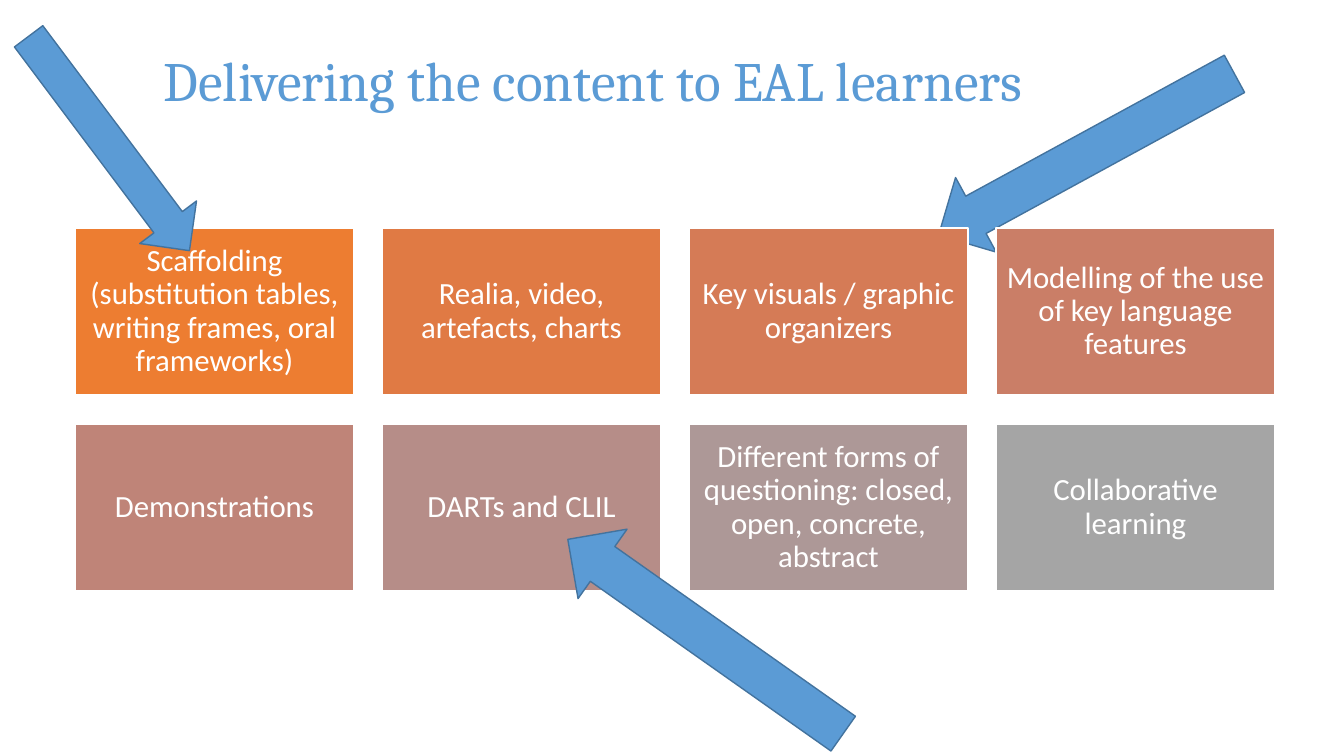
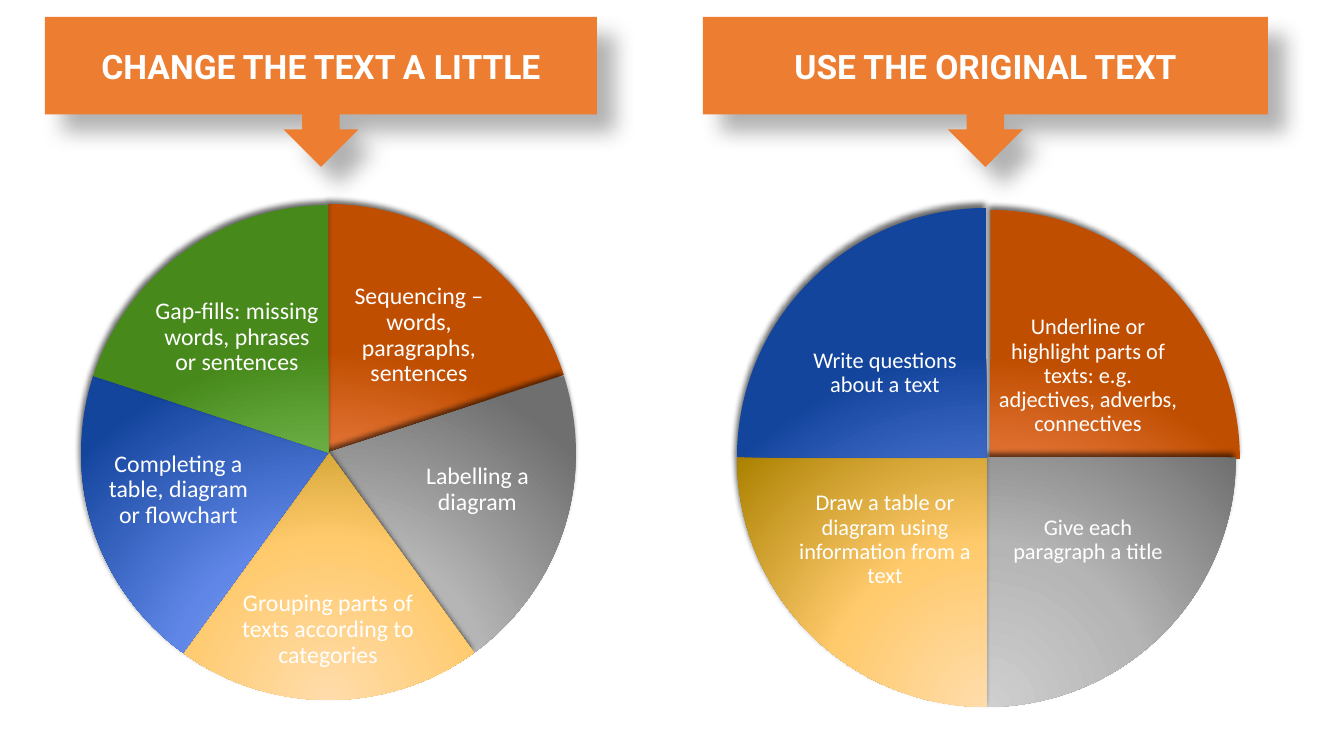
from pptx import Presentation
from pptx import util as u
from pptx.dml.color import RGBColor
from pptx.enum import shapes, text
from pptx.oxml import parse_xml
from pptx.oxml.ns import nsdecls, qn

PX = 914400 / 100.8
SHAPE = shapes.MSO_SHAPE
WHITE = RGBColor(0xFF, 0xFF, 0xFF)
BLUE = RGBColor(0x5B, 0x9B, 0xD5)
DARK_BLUE = RGBColor(0x43, 0x73, 0x9E)
ORANGE = RGBColor(0xED, 0x7D, 0x31)

# Gradient stops of a slice: centre, 46 %, rim
RUST = "FFBAA3", "FF9363", "C04E00"
GREY = "CFCFCF", "B5B5B5", "6F6F6F"
GOLD = "FFDCAB", "FFCA6C", "AB8100"
NAVY = "A3B5EC", "6087E7", "14459D"
GREEN = "B7DDA7", "8ACF67", "47891B"

CARDS = [
    ("Scaffolding (substitution tables, writing frames, oral frameworks)", ORANGE),
    ("Realia, video, artefacts, charts", RGBColor(0xE0, 0x7A, 0x44)),
    ("Key visuals / graphic organizers", RGBColor(0xD5, 0x7B, 0x56)),
    ("Modelling of the use of key language features", RGBColor(0xCA, 0x7E, 0x67)),
    ("Demonstrations", RGBColor(0xBF, 0x84, 0x78)),
    ("DARTs and CLIL", RGBColor(0xB6, 0x8D, 0x88)),
    ("Different forms of questioning: closed, open, concrete, abstract",
     RGBColor(0xAD, 0x98, 0x97)),
    ("Collaborative learning", RGBColor(0xA5, 0xA5, 0xA5)),
]

# Slice: pie corner, gradient, label, label box
CHANGED_TEXT = [
    ((81, 204), RUST, "Sequencing – words, paragraphs, sentences", (335, 278, 168, 115)),
    ((81, 205), GREY, "Labelling a diagram", (404, 428, 147, 124)),
    ((81, 205), GOLD, "Grouping parts of texts according to categories",
     (240, 577, 176, 106)),
    ((81, 205), NAVY, "Completing a table, diagram or flowchart",
     (105, 428, 147, 124)),
    ((81, 205), GREEN, "Gap-fills: missing words, phrases or sentences",
     (153, 280, 168, 115)),
]
ORIGINAL_TEXT = [
    ((741, 210), RUST,
     "Underline or highlight parts of texts: e.g. adjectives, adverbs, connectives",
     (996, 302, 184, 148)),
    ((737, 208), GREY, "Give each paragraph a title", (996, 466, 184, 148)),
    ((737, 208), GOLD, "Draw a table or diagram using information from a text",
     (793, 466, 184, 148)),
    ((737, 208), NAVY, "Write questions about a text", (793, 299, 184, 148)),
]


def px(*lengths):
    return [u.Emu(round(n * PX)) for n in lengths]


def set_text(sp, words, size, font="Calibri", color=WHITE, bold=False,
             align=text.PP_ALIGN.CENTER, spacing=None, inset=None):
    tf = sp.text_frame
    tf.text = words
    tf.word_wrap = True
    tf.vertical_anchor = text.MSO_ANCHOR.MIDDLE
    if inset is not None:
        tf.margin_left = tf.margin_top = tf.margin_right = tf.margin_bottom = px(inset)[0]
    p = tf.paragraphs[0]
    p.alignment = align
    if spacing:
        p.line_spacing = spacing
    f = p.runs[0].font
    f.name, f.size, f.bold = font, u.Pt(size), bold
    f.color.rgb = color


def add_shape(s, kind, box, fill=None, line=None):
    sp = s.shapes.add_shape(kind, *px(*box))
    sp.shadow.inherit = False
    if fill is None:
        sp.fill.background()
    else:
        sp.fill.solid()
        sp.fill.fore_color.rgb = fill
    if line is None:
        sp.line.fill.background()
    else:
        sp.line.color.rgb = line
        sp.line.width = u.Pt(1)
    return sp


def add_shadow(sp, alpha, blur, dist, angle):
    """Blur and distance are in points, alpha in percent, angle in degrees."""
    effects = sp._element.spPr.find(qn("a:effectLst"))
    effects.append(parse_xml(
        f'<a:outerShdw {nsdecls("a")} blurRad="{u.Pt(blur)}" dist="{u.Pt(dist)}" '
        f'dir="{angle * 60000}" algn="tl" rotWithShape="0"><a:srgbClr val="000000">'
        f'<a:alpha val="{alpha * 1000}"/></a:srgbClr></a:outerShdw>'))


def fill_radial(sp, colors):
    stops = "".join(f'<a:gs pos="{pos}000"><a:srgbClr val="{c}"/></a:gs>'
                    for pos, c in zip((0, 46, 100), colors))
    grad = parse_xml(
        f'<a:gradFill {nsdecls("a")} rotWithShape="1"><a:gsLst>{stops}</a:gsLst>'
        '<a:path path="circle"><a:fillToRect l="50000" t="155000" r="50000" '
        'b="-55000"/></a:path></a:gradFill>')
    spPr = sp._element.spPr
    spPr.replace(spPr.find(qn("a:noFill")), grad)


def add_title(s, words):
    tb = s.shapes.add_textbox(*px(154, 6, 996, 146))
    set_text(tb, words, 39.6, "Cambria", BLUE, align=text.PP_ALIGN.LEFT)


def add_arrow(s, box, rotation):
    add_shape(s, SHAPE.RIGHT_ARROW, box, BLUE, DARK_BLUE).rotation = rotation


def add_cards(s, columns=4):
    for i, (words, color) in enumerate(CARDS):
        row, col = divmod(i, columns)
        box = 75 + 307 * col, 228 + 196 * row, 279, 167
        sp = add_shape(s, SHAPE.RECTANGLE, box, color, WHITE)
        set_text(sp, words, 22, spacing=0.9, inset=9)


def add_wheel(s, slices, diameter, size):
    """Equal slices, clockwise from the top, each with its label."""
    step = 360 / len(slices)
    for i, (corner, colors, words, label_box) in enumerate(slices):
        sp = add_shape(s, SHAPE.PIE, (*corner, diameter, diameter))
        for end in (0, 1):
            degrees = (270 + step * (i + end)) % 360
            sp.adjustments[end] = degrees * 0.6
        fill_radial(sp, colors)
        add_shadow(sp, 60, 4.2, 3.2, 245)
        tb = s.shapes.add_textbox(*px(*label_box))
        set_text(tb, words, size, spacing=0.9, inset=2)


def add_heading(s, words, left, width):
    sp = add_shape(s, SHAPE.DOWN_ARROW_CALLOUT, (left, 17, width, 150), ORANGE)
    add_shadow(sp, 30, 15, 18, 45)
    set_text(sp, words, 24, "Roboto", bold=True)


def main():
    prs = Presentation()
    prs.slide_width, prs.slide_height = px(1344, 756)
    blank = prs.slide_layouts[6]

    s = prs.slides.add_slide(blank)
    add_arrow(s, (918, 112, 337, 85), 151.4)
    add_cards(s)
    add_arrow(s, (-25, 108, 268, 71), 53.1)
    add_title(s, "Delivering the content to EAL learners")
    add_arrow(s, (537, 594, 337, 85), 215.2)

    s = prs.slides.add_slide(blank)
    add_wheel(s, CHANGED_TEXT, 495, 17)
    add_wheel(s, ORIGINAL_TEXT, 499, 16)
    add_heading(s, "CHANGE THE TEXT A LITTLE", 45, 552)
    add_heading(s, "USE THE ORIGINAL TEXT", 703, 565)

    prs.save("out.pptx")


if __name__ == "__main__":
    main()
